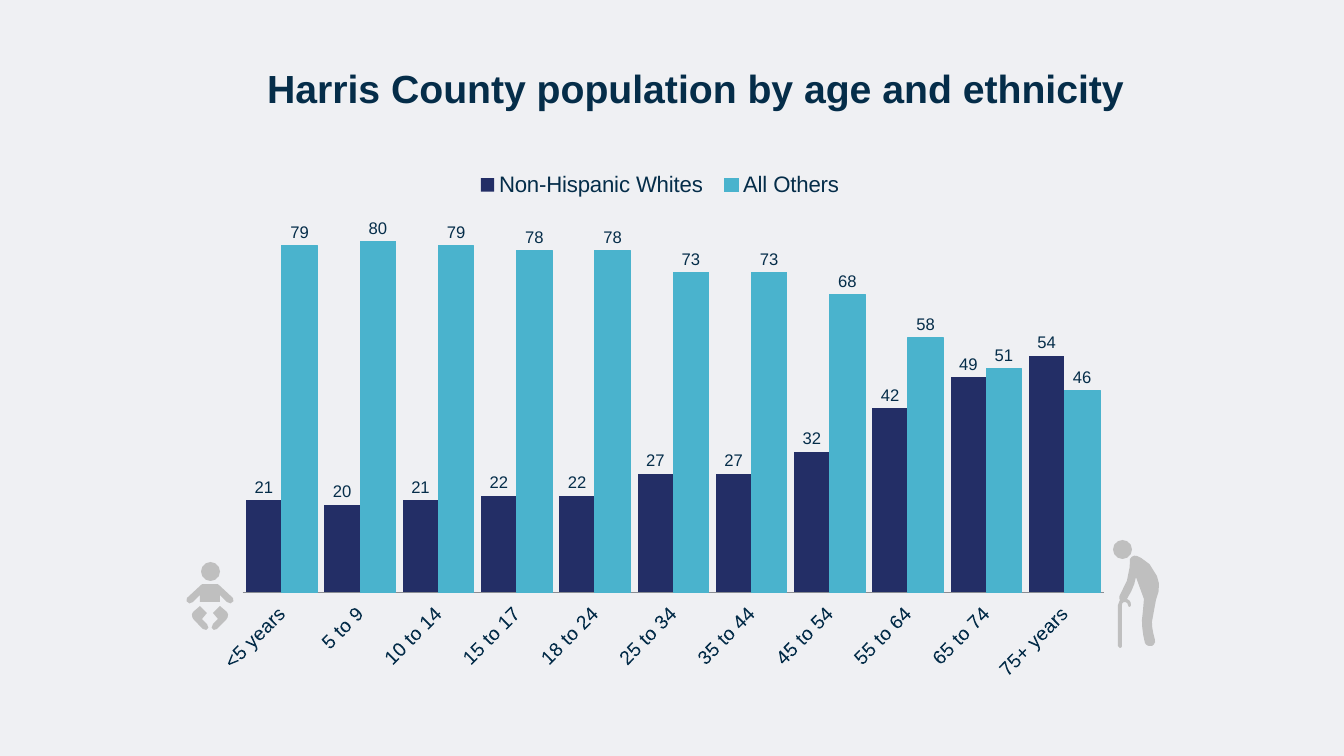
from lxml import etree
from pptx import Presentation
from pptx import util as u
from pptx.chart.data import CategoryChartData
from pptx.dml.color import RGBColor
from pptx.enum import chart as ch, shapes, text
from pptx.oxml.ns import qn

PX = 9144000 / 1008
BACKGROUND = RGBColor(0xEF, 0xF0, 0xF3)
NAVY_TEXT = RGBColor(0x05, 0x2D, 0x49)
INDIGO = RGBColor(0x23, 0x2E, 0x66)
TEAL = RGBColor(0x4A, 0xB3, 0xCD)
AXIS_GREY = RGBColor(0x88, 0x8C, 0x93)
ICON_GREY = RGBColor(0xBF, 0xBF, 0xBF)


def px(*lengths):
    return [u.Emu(round(length * PX)) for length in lengths]


def trace(start, steps):
    """Points of an outline: a step of 2 numbers is a line, one of 6 a Bezier curve."""
    points = [start]
    for step in steps:
        if len(step) == 2:
            points.append(step)
            continue
        nodes = [points[-1], step[:2], step[2:4], step[4:]]
        for t in (1 / 3, 2 / 3, 1):
            weights = ((1 - t) ** 3, 3 * t * (1 - t) ** 2, 3 * t * t * (1 - t), t ** 3)
            points.append(tuple(sum(w * n[k] for w, n in zip(weights, nodes)) for k in (0, 1)))
    return points


prs = Presentation()
prs.slide_width, prs.slide_height = px(1344, 756)
slide = prs.slides.add_slide(prs.slide_layouts[5])
slide.background.fill.solid()
slide.background.fill.fore_color.rgb = BACKGROUND

# Title
title = slide.shapes.title
title.left, title.top, title.width, title.height = px(127, 30, 1137, 115)
frame = title.text_frame
frame.text = "Harris County population by age and ethnicity"
frame.word_wrap = True
frame.auto_size = text.MSO_AUTO_SIZE.NONE
frame.vertical_anchor = text.MSO_ANCHOR.MIDDLE
for side in ("left", "top", "right", "bottom"):
    setattr(frame, f"margin_{side}", px(5)[0])
frame.paragraphs[0].alignment = text.PP_ALIGN.CENTER
title_font = frame.paragraphs[0].runs[0].font
for key, value in {"size": u.Pt(28), "bold": True, "name": "Arial"}.items():
    setattr(title_font, key, value)
title_font.color.rgb = NAVY_TEXT

# Population chart
population = CategoryChartData(number_format="0")
population.categories = ["<5 years", "5 to 9", "10 to 14", "15 to 17", "18 to 24", "25 to 34",
                         "35 to 44", "45 to 54", "55 to 64", "65 to 74", "75+ years"]
population.add_series("Non-Hispanic Whites", [21, 20, 21, 22, 22, 27, 27, 32, 42, 49, 54])
population.add_series("All Others", [79, 80, 79, 78, 78, 73, 73, 68, 58, 51, 46])
chart = slide.shapes.add_chart(ch.XL_CHART_TYPE.COLUMN_CLUSTERED,
                               *px(220, 144, 889, 545), population).chart
chart.has_title = False
chart.has_legend = True
legend = chart.legend
legend.position = ch.XL_LEGEND_POSITION.TOP
legend.include_in_layout = True

ages, shares = chart.category_axis, chart.value_axis
ages.tick_label_position = ch.XL_TICK_LABEL_POSITION.LOW
ages.format.line.color.rgb = AXIS_GREY
ages.format.line.width = u.Pt(1)
shares_format = {"minimum_scale": 0, "maximum_scale": 100, "major_unit": 20,
                 "has_major_gridlines": False,
                 "tick_label_position": ch.XL_TICK_LABEL_POSITION.NONE}
for key, value in shares_format.items():
    setattr(shares, key, value)
shares.format.line.fill.background()
for axis in (ages, shares):
    axis.major_tick_mark = axis.minor_tick_mark = ch.XL_TICK_MARK.NONE

columns = chart.plots[0]
columns.gap_width, columns.overlap = 20, 0
columns.vary_by_categories = False
chart_fonts = [(chart.font, 10), (legend.font, 16), (ages.tick_labels.font, 14)]
for group, color in zip(columns.series, (INDIGO, TEAL)):
    group.format.fill.solid()
    group.format.fill.fore_color.rgb = color
    group.invert_if_negative = False
    labels = group.data_labels
    labels.show_value = True
    labels.number_format, labels.number_format_is_linked = "0", False
    labels.position = ch.XL_LABEL_POSITION.OUTSIDE_END
    chart_fonts.append((labels.font, 12))
columns.series[1].format.line.color.rgb = TEAL
columns.series[1].format.line.width = u.Pt(0.75)
for font, size in chart_fonts:
    font.name, font.size = "Arial", u.Pt(size)
    font.color.rgb = NAVY_TEXT

chart_xml = chart._chartSpace
chart_xml.find(".//" + qn("c:catAx")).find(".//" + qn("a:bodyPr")).set("rot", "-2700000")
placements = [
    ("c:plotArea", 0, {"layoutTarget": "inner", "xMode": "edge", "yMode": "edge",
                       "x": 0.016, "y": 0.018, "w": 0.978, "h": 0.805}),
    ("c:legend", 1, {"xMode": "edge", "yMode": "edge",
                     "x": 0.27, "y": 0.045, "w": 0.44, "h": 0.06}),
]
for tag, position, values in placements:
    part = chart_xml.find(".//" + qn(tag))
    for old in part.findall(qn("c:layout")):
        part.remove(old)
    layout = etree.Element(qn("c:layout"))
    part.insert(position, layout)
    manual = etree.SubElement(layout, qn("c:manualLayout"))
    for key, value in values.items():
        etree.SubElement(manual, qn("c:" + key)).set("val", str(value))

# Baby at the young end, elder with a cane at the old end
BABY_AXIS = 210
half_body = trace((210, 602), [(200, 602), (200, 595), (193, 602), (190, 606, 184, 601, 187, 598),
                               (201, 585), (202, 584, 203, 584, 205, 584)])
right_leg = trace((220, 606), [(213, 613), (218, 619), (213, 624), (209, 628, 214, 632, 217, 629),
                               (226, 620), (228, 618, 229, 614, 227, 612)])
mirrored_body, left_leg = ([(2 * BABY_AXIS - x, y) for x, y in outline]
                           for outline in (half_body, right_leg))
elder_body = trace((1120, 600), [
    (1119, 598, 1119, 597, 1120, 595), (1130, 582, 1130, 562, 1130, 562), (1130, 559),
    (1132, 556, 1134, 555, 1137, 556), (1137, 556, 1152, 561, 1157, 576),
    (1160, 583, 1160, 591, 1156, 600), (1152, 622), (1152, 627, 1153, 633, 1155, 640),
    (1156, 642, 1154, 645, 1152, 646), (1150, 646), (1148, 646, 1146, 645, 1145, 643),
    (1143, 635, 1142, 628, 1142, 620), (1143, 611), (1144, 599),
    (1136, 577), (1135, 584, 1132, 591, 1127, 599), (1130, 600, 1131, 602, 1131, 605),
    (1131, 606, 1130, 607, 1129, 607), (1128, 605),
    (1128, 603, 1126, 602, 1125, 602), (1123, 602, 1122, 603, 1122, 605), (1122, 646),
    (1122, 647, 1121, 648, 1120, 648), (1118, 646), (1118, 605)])
figures = [
    ((201, 562, 19, 19), [half_body + mirrored_body[:0:-1], right_leg, left_leg]),
    ((1113, 540, 19, 19), [elder_body]),
]
for head, outlines in figures:
    figure = slide.shapes.add_group_shape()
    pieces = [figure.shapes.add_shape(shapes.MSO_SHAPE.OVAL, *px(*head))]
    for outline in outlines:
        builder = figure.shapes.build_freeform(*px(*outline[0]), scale=1.0)
        builder.add_line_segments([px(*point) for point in outline[1:]], close=True)
        pieces.append(builder.convert_to_shape())
    for piece in pieces:
        piece.shadow.inherit = False
        piece.fill.solid()
        piece.fill.fore_color.rgb = ICON_GREY
        piece.line.fill.background()

prs.save("out.pptx")
